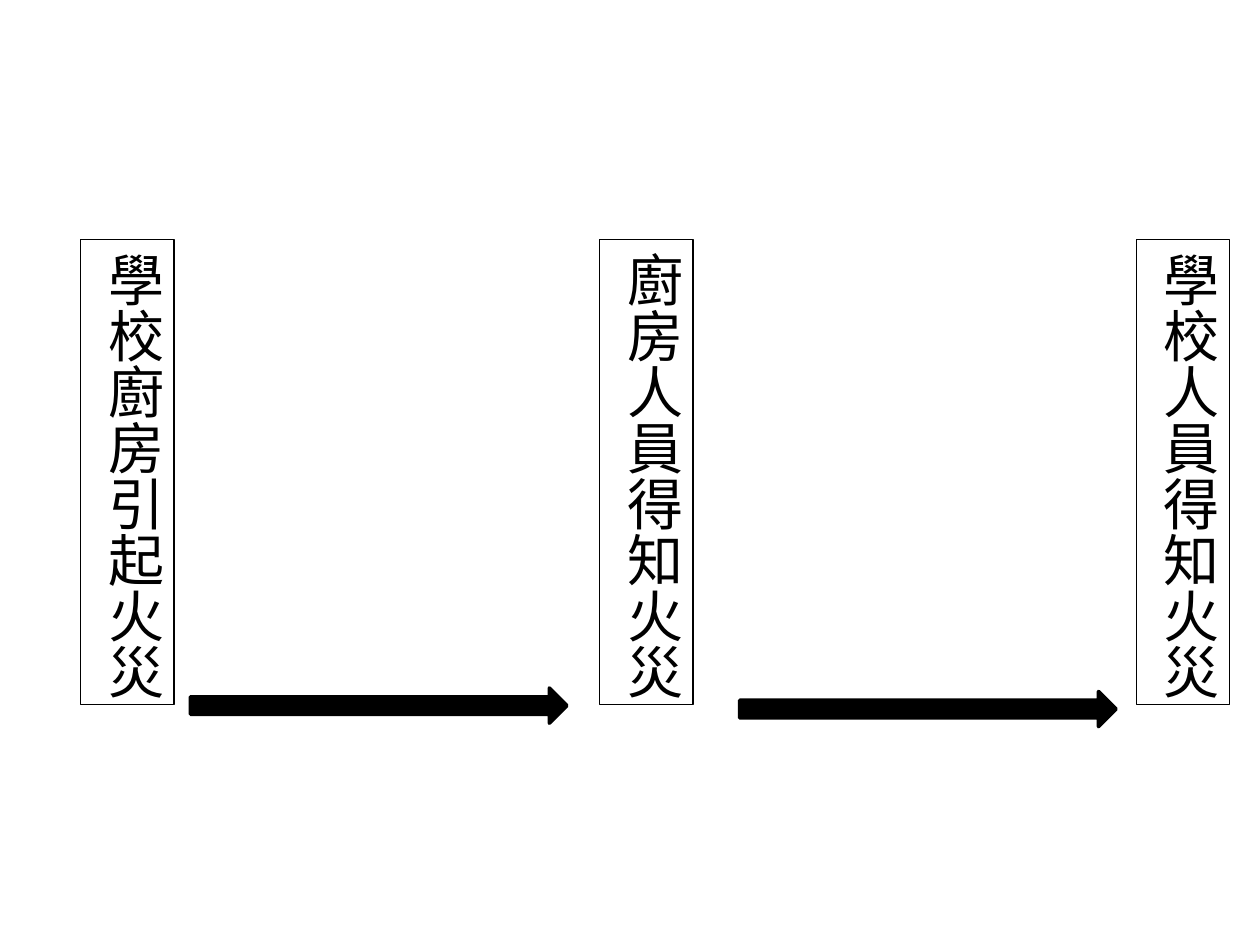
from dataclasses import dataclass

from pptx import Presentation
from pptx.dml.color import RGBColor
from pptx.enum.shapes import MSO_SHAPE
from pptx.enum.text import MSO_AUTO_SIZE
from pptx.util import Cm, Pt


@dataclass(frozen=True)
class Theme:
    ink: RGBColor = RGBColor(0x00, 0x00, 0x00)
    font: str = "Calibri"
    text_size: Pt = Pt(32)
    box_line: Pt = Pt(0.75)
    arrow_line: Pt = Pt(2)


THEME = Theme()

# Shared sizes, in centimetres
BOX_TOP, BOX_WIDTH, BOX_HEIGHT = 4.83, 1.88, 9.37
ARROW_WIDTH, ARROW_HEIGHT = 7.59, 0.71

# Left edge and wording of each stage
STAGES = [
    (1.63, "學校廚房引起火災"),
    (12.09, "廚房人員得知火災"),
    (22.91, "學校人員得知火災"),
]

# Left and top of each arrow
ARROWS = [(3.84, 13.87), (14.91, 13.94)]


def add_stage(page, left, wording):
    """Add an outlined box with vertical East Asian text."""
    box = page.shapes.add_textbox(Cm(left), Cm(BOX_TOP), Cm(BOX_WIDTH), Cm(BOX_HEIGHT))
    box.line.color.rgb = THEME.ink
    box.line.width = THEME.box_line

    frame = box.text_frame
    frame.text = wording
    frame.word_wrap = False
    frame.auto_size = MSO_AUTO_SIZE.SHAPE_TO_FIT_TEXT
    box.element.txBody.bodyPr.set("vert", "eaVert")

    span = frame.paragraphs[0].runs[0]
    span.font.name = THEME.font
    span.font.size = THEME.text_size
    span.font.color.rgb = THEME.ink


def add_arrow(page, left, top):
    """Add a solid block arrow pointing to the next stage."""
    arrow = page.shapes.add_shape(
        MSO_SHAPE.RIGHT_ARROW, Cm(left), Cm(top), Cm(ARROW_WIDTH), Cm(ARROW_HEIGHT)
    )
    arrow.shadow.inherit = False
    arrow.fill.solid()
    arrow.fill.fore_color.rgb = THEME.ink
    arrow.line.color.rgb = THEME.ink
    arrow.line.width = THEME.arrow_line


def main():
    deck = Presentation()
    deck.slide_width, deck.slide_height = Cm(25.4), Cm(19.05)
    page = deck.slides.add_slide(deck.slide_layouts[6])

    # Stages of the fire report
    for left, wording in STAGES:
        add_stage(page, left, wording)

    # Arrows between the stages
    for left, top in ARROWS:
        add_arrow(page, left, top)

    deck.save("out.pptx")


if __name__ == "__main__":
    main()
